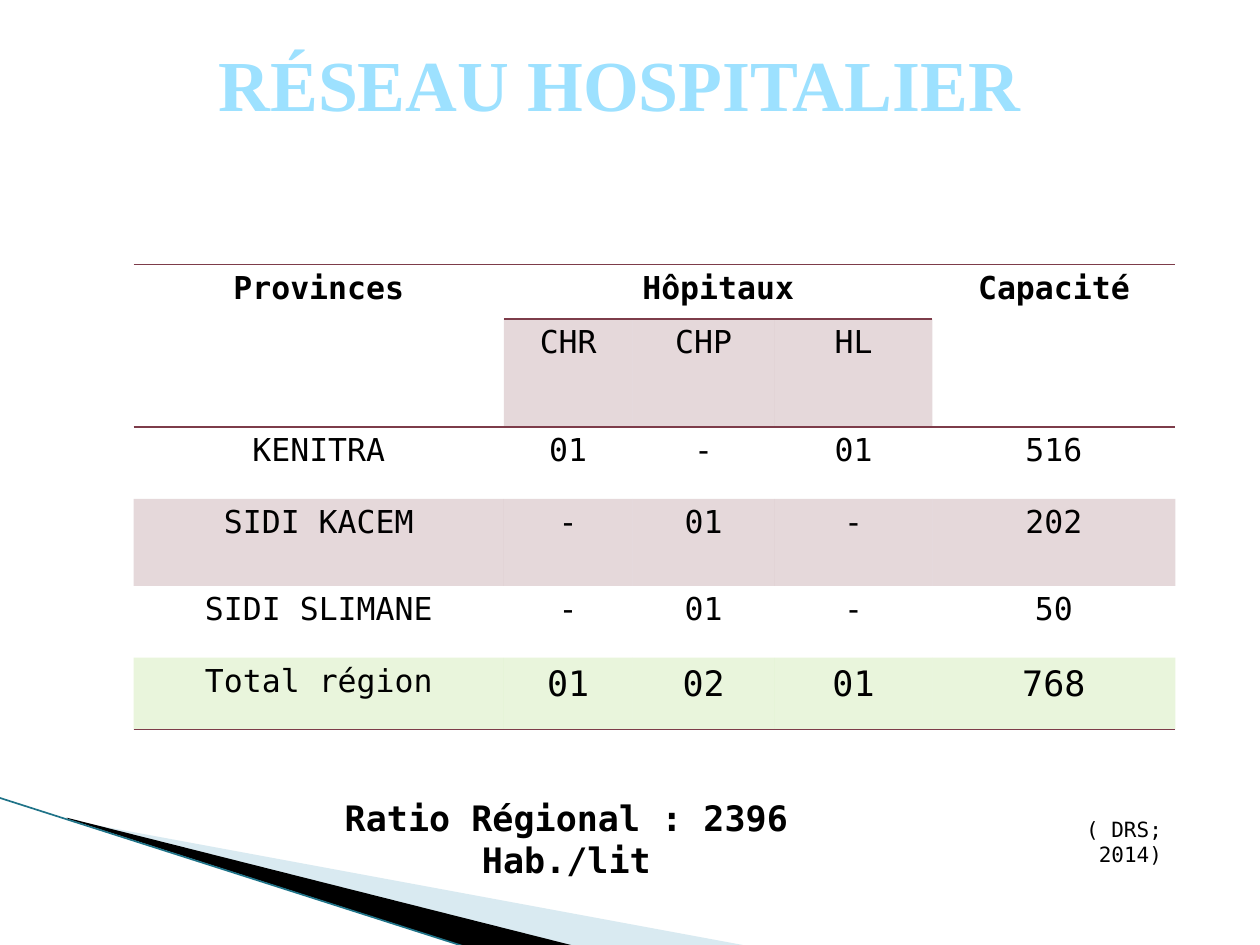
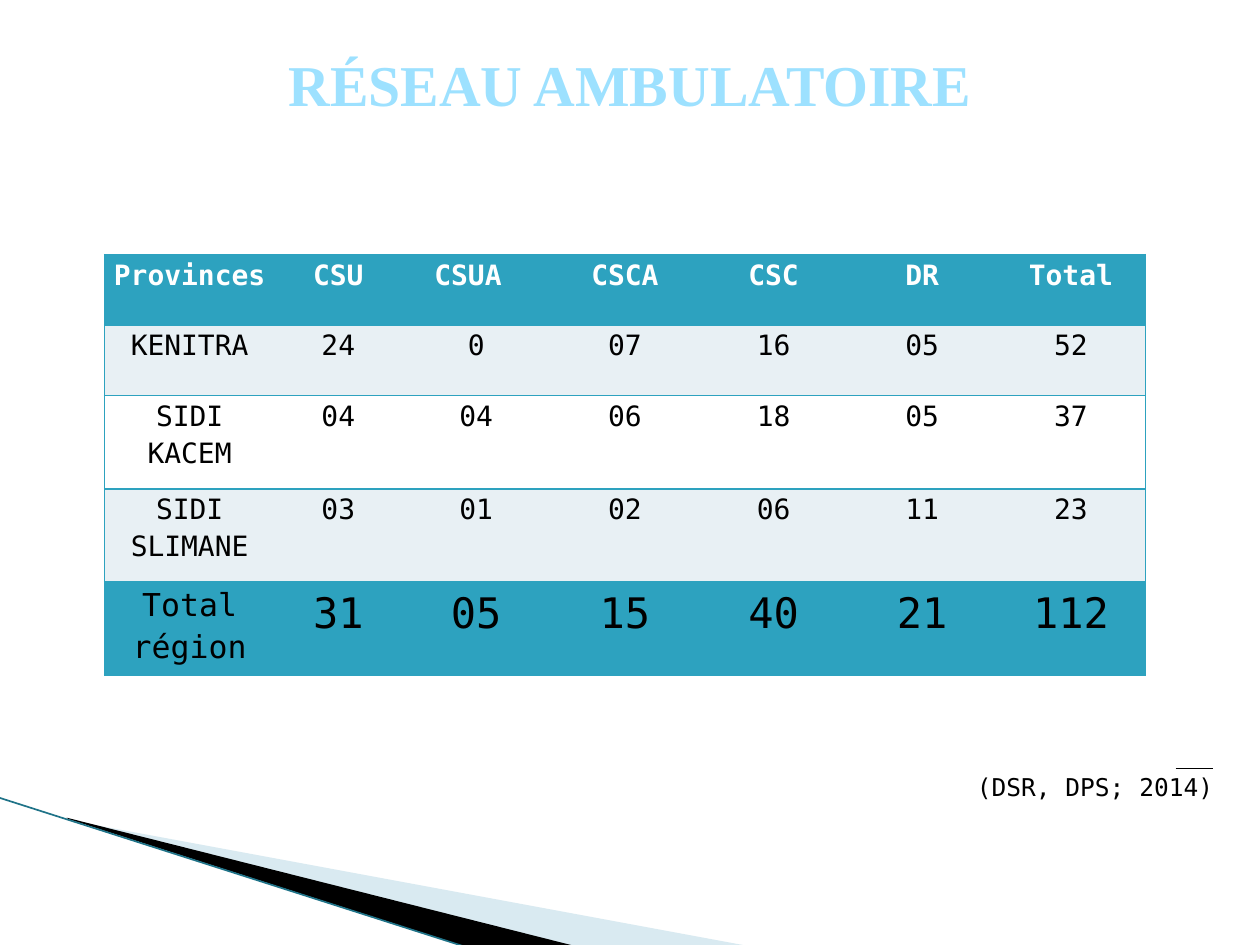
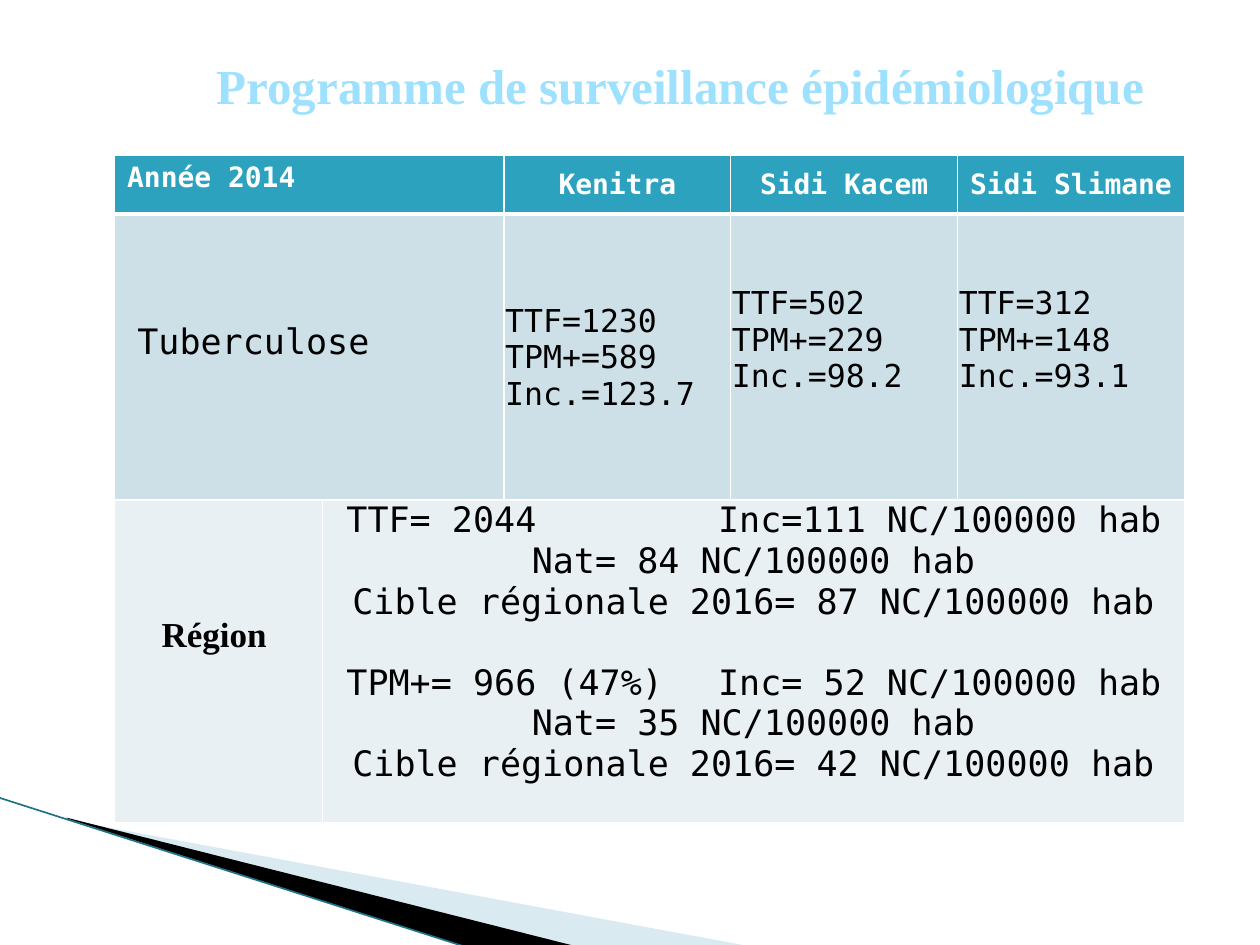
from dataclasses import dataclass, field, replace
from typing import Any, NamedTuple

from lxml import etree
from pptx import Presentation
from pptx import util as u
from pptx.dml.color import RGBColor
from pptx.enum import shapes, text
from pptx.oxml.ns import qn

# Slide size and the grid that all lengths are counted in
WIDTH, HEIGHT = u.Inches(10), u.Inches(7.5)
COL, ROW = WIDTH // 100, HEIGHT // 75

COLOURS = {
    "ink": "000000", "paper": "FFFFFF", "title": "9DE1FF",
    "teal": "2DA2BF", "pale": "E8F0F4", "mist": "CDE0E8",
    "wine": "7D3C4A", "green": "92D050",
    "sweep": "A0CBDC", "rim": "1F7388",
}
MONO, SERIF = "DejaVu Sans Mono", "Times New Roman"
NO_GRID_STYLE = "{2D5ABB26-0587-4C30-8999-92F81FD0307C}"
CENTER, LEFT, RIGHT = text.PP_ALIGN.CENTER, text.PP_ALIGN.LEFT, text.PP_ALIGN.RIGHT
MIDDLE = text.MSO_ANCHOR.MIDDLE


class Box(NamedTuple):
    """Left, top, width and height in grid columns and rows."""
    left: float
    top: float
    width: float
    height: float

    def emu(self) -> tuple[int, ...]:
        return tuple(round(n * step) for n, step in zip(self, (COL, ROW, COL, ROW)))


def margins(left: float, top: float, right: float, bottom: float) -> dict[str, Any]:
    sides = ("left", "top", "right", "bottom")
    return {f"margin_{side}": u.Inches(n)
            for side, n in zip(sides, (left, top, right, bottom))}


@dataclass(frozen=True)
class Look:
    """Format of a text box or table cell."""
    size: float = 18
    bold: bool = False
    face: str = MONO
    ink: str = "ink"
    align: Any = CENTER
    spacing: float = 1.0
    holder: dict[str, Any] = field(default_factory=dict)
    fill: str | None = None
    alpha: int = 100
    edge: str = "teal"
    edges: dict[str, float] = field(default_factory=dict)
    tabs: tuple[float, ...] = ()
    gaps: dict[int, float] = field(default_factory=dict)


class Entry(NamedTuple):
    words: str
    look: Look


@dataclass(frozen=True)
class Grid:
    """Table with column widths and row heights in grid units."""
    left: float
    top: float
    columns: list[float]
    rows: list[float]
    entries: list[list[Entry]]
    merges: tuple[tuple[int, int, int, int], ...] = ()


def rgb(key: str) -> RGBColor:
    return RGBColor.from_string(COLOURS[key])


def assign(target: Any, values: dict[str, Any]) -> None:
    for name, value in values.items():
        setattr(target, name, value)


def paint(target: Any, properties: Any, key: str, alpha: int = 100) -> None:
    target.fill.solid()
    target.fill.fore_color.rgb = rgb(key)
    if alpha < 100:
        colour = properties.find(qn("a:solidFill"))[0]
        etree.SubElement(colour, qn("a:alpha"), val=str(alpha * 1000))


def write(frame: Any, words: str, look: Look) -> None:
    for index, line in enumerate(words.split("\n")):
        paragraph = frame.paragraphs[0] if index == 0 else frame.add_paragraph()
        tabbed = "\t" in line
        if tabbed:
            stops = etree.SubElement(paragraph._p.get_or_add_pPr(), qn("a:tabLst"))
            for stop in look.tabs:
                etree.SubElement(stops, qn("a:tab"), pos=str(u.Inches(stop)), algn="l")
        assign(paragraph, {
            "alignment": LEFT if tabbed else look.align,
            "line_spacing": look.spacing,
            "space_before": u.Pt(look.gaps.get(index, 0)),
        })
        run = paragraph.add_run()
        run.text = line
        assign(run.font, {"size": u.Pt(look.size), "bold": look.bold, "name": look.face})
        run.font.color.rgb = rgb(look.ink)


def add_title(slide: Any, words: str, box: Box, size: float) -> None:
    title = slide.shapes.title
    assign(title, dict(zip(("left", "top", "width", "height"), box.emu())))
    assign(title.text_frame, {"word_wrap": True, "vertical_anchor": MIDDLE,
                              "auto_size": text.MSO_AUTO_SIZE.NONE})
    write(title.text_frame, words, Look(size, True, SERIF, "title"))


def add_note(slide: Any, words: str, box: Box, look: Look) -> Any:
    note = slide.shapes.add_textbox(*box.emu())
    note.text_frame.word_wrap = True
    write(note.text_frame, words, look)
    return note


def draw_edges(properties: Any, look: Look) -> None:
    for side in "LRTB":
        if side in look.edges:
            line = etree.SubElement(properties, qn(f"a:ln{side}"),
                                    w=str(u.Pt(look.edges[side])))
            solid = etree.SubElement(line, qn("a:solidFill"))
            etree.SubElement(solid, qn("a:srgbClr"), val=COLOURS[look.edge])


def add_grid(slide: Any, grid: Grid) -> None:
    box = Box(grid.left, grid.top, sum(grid.columns), sum(grid.rows))
    holder = slide.shapes.add_table(len(grid.rows), len(grid.columns), *box.emu())
    table = holder.table
    assign(table, {"first_row": False, "horz_banding": False})
    table._tbl.tblPr.find(qn("a:tableStyleId")).text = NO_GRID_STYLE
    for column, width in zip(table.columns, grid.columns):
        column.width = round(width * COL)
    for row, height in zip(table.rows, grid.rows):
        row.height = round(height * ROW)
    for r, entries in enumerate(grid.entries):
        for c, (words, look) in enumerate(entries):
            cell = table.cell(r, c)
            assign(cell, look.holder)
            properties = cell._tc.get_or_add_tcPr()
            draw_edges(properties, look)
            if look.fill:
                paint(cell, properties, look.fill, look.alpha)
            if words:
                write(cell.text_frame, words, look)
    for top, left, bottom, right in grid.merges:
        table.cell(top, left).merge(table.cell(bottom, right))


def add_line(slide: Any, start: tuple[float, float], end: tuple[float, float],
             key: str, weight: float) -> Any:
    ends = [round(n * step) for n, step in zip((*start, *end), (COL, ROW) * 2)]
    line = slide.shapes.add_connector(shapes.MSO_CONNECTOR.STRAIGHT, *ends)
    line.line.color.rgb = rgb(key)
    line.line.width = u.Pt(weight)
    etree.SubElement(line._element.spPr, qn("a:effectLst"))
    return line


def add_wedge(slide: Any, points: list[tuple[float, float]], key: str, alpha: int) -> Any:
    corners = [(round(x * COL), round(y * ROW)) for x, y in points]
    builder = slide.shapes.build_freeform(*corners[0], scale=1.0)
    builder.add_line_segments(corners[1:], close=True)
    wedge = builder.convert_to_shape()
    wedge.shadow.inherit = False
    wedge.line.fill.background()
    paint(wedge, wedge._element.spPr, key, alpha)
    return wedge


def decorate_layout(layout: Any, slide: Any) -> None:
    """Corner sweep, moved to the layout so that every slide shows it."""
    sweep = [
        add_wedge(slide, [(5.5, 65.1), (59.5, 75.1), (45.6, 75.1), (5.5, 65)], "sweep", 40),
        add_wedge(slide, [(5.3, 64.9), (45.7, 75.1), (37.2, 75.2), (5.4, 65)], "ink", 100),
        add_line(slide, (-0.1, 63.3), (37.1, 75.2), "rim", 0.95),
    ]
    for part in sweep:
        layout.shapes._spTree.append(part._element)


# Cell formats shared by the tables
TIGHT = margins(0.07, 0, 0.07, 0)
PLAIN = Look(spacing=1.15, holder=TIGHT)


def hospital_grid() -> Grid:
    body = replace(PLAIN, edge="wine")
    head = replace(body, bold=True, edges={"T": 1, "B": 1})
    rose = replace(body, fill="wine", alpha=20)
    total = replace(body, fill="green", alpha=20, edges={"B": 1})
    sub = replace(rose, edges={"T": 1})
    provinces = [(["KENITRA", "01", "-", "01", "516"], body),
                 (["SIDI KACEM", "-", "01", "-", "202"], rose),
                 (["SIDI SLIMANE", "-", "01", "-", "50"], body)]
    entries = [
        [Entry(w, head) for w in ("Provinces", "Hôpitaux", "", "", "Capacité")],
        [Entry("", replace(head, edges={"B": 1})),
         *(Entry(w, sub) for w in ("CHR", "CHP", "HL")),
         Entry("", replace(head, edges={"B": 1}))],
        *([Entry(w, look) for w in words] for words, look in provinces),
        [Entry("Total région", total),
         *(Entry(w, replace(total, size=20)) for w in ("01", "02", "01", "768"))],
    ]
    return Grid(10.6, 21, [29.4, 10.2, 11.3, 12.5, 19.3],
                [4.3, 8.6, 5.7, 6.9, 5.7, 5.7], entries,
                ((0, 0, 1, 0), (0, 1, 0, 3), (0, 4, 1, 4)))


def ambulatory_grid() -> Grid:
    body = replace(PLAIN, size=16)
    rows = [
        (["Provinces", "CSU", "CSUA", "CSCA", "CSC", "DR", "Total"],
         replace(body, bold=True, ink="paper", fill="teal")),
        (["KENITRA", "24", "0", "07", "16", "05", "52"], replace(body, fill="pale")),
        (["SIDI KACEM", "04", "04", "06", "18", "05", "37"], replace(body, fill="paper")),
        (["SIDI SLIMANE", "03", "01", "02", "06", "11", "23"], replace(body, fill="pale")),
        (["Total région", "31", "05", "15", "40", "21", "112"],
         replace(body, size=24, fill="teal")),
    ]
    entries = []
    for r, (words, look) in enumerate(rows):
        line = []
        for c, word in enumerate(words):
            outer = {0: {"L": 1}, len(words) - 1: {"R": 1}}.get(c, {})
            cell = replace(look, edges={"T": 1, "B": 1, **outer})
            if c == 0:
                cell = replace(cell, size=min(look.size, 18),
                               holder=margins(0.05, 0, 0.05, 0))
            if word == "CSUA":
                cell = replace(cell, holder=margins(0.07, 0, 0.2, 0))
            line.append(Entry(word, cell))
        entries.append(line)
    return Grid(8.3, 20.2, [13.5, 10.1] + [11.8] * 5, [5.6] * 2 + [7.4] * 3, entries)


def surveillance_grid() -> Grid:
    around = {"L": 1, "R": 1, "T": 1, "B": 1}
    base = Look(edge="paper", edges=around)
    head = replace(base, size=16, bold=True, ink="paper", fill="teal",
                   edges={**around, "B": 3},
                   holder={**margins(0.08, 0.05, 0.08, 0.05), "vertical_anchor": MIDDLE})
    year = replace(head, align=LEFT, holder=margins(0.1, 0.05, 0.1, 0.05))
    case = replace(base, align=LEFT, fill="mist", edges={**around, "T": 3})
    disease = replace(case, size=20, holder={**margins(0.18, 0.01, 0.01, 0.24),
                                             "vertical_anchor": MIDDLE})

    def figures(ttf: str, tpm: str, incidence: str, lift: float) -> Entry:
        holder = {**margins(0.01, 0.01, 0.01, lift), "vertical_anchor": MIDDLE}
        return Entry(f"TTF={ttf}\nTPM+={tpm}\nInc.={incidence}",
                     replace(case, holder=holder))

    region = replace(base, size=20, bold=True, face=SERIF, fill="pale",
                     holder=margins(0.07, 0.92, 0.14, 0))
    summary = replace(base, size=20, fill="pale", holder=TIGHT,
                      tabs=(0.12, 3.07), gaps={3: 23})
    results = "\n".join([
        "\tTTF= 2044\tInc=111 NC/100000 hab",
        "Nat= 84 NC/100000 hab",
        "Cible régionale 2016= 87 NC/100000 hab",
        "\tTPM+= 966 (47%)\tInc= 52 NC/100000 hab",
        "Nat= 35 NC/100000 hab",
        "Cible régionale 2016= 42 NC/100000 hab",
    ])
    entries = [
        [Entry("Année 2014", year), Entry("", year),
         *(Entry(w, head) for w in ("Kenitra", "Sidi Kacem", "Sidi Slimane"))],
        [Entry("Tuberculose", disease), Entry("", disease),
         figures("1230", "589", "123.7", 0), figures("502", "229", "98.2", 0.28),
         figures("312", "148", "93.1", 0.28)],
        [Entry("Région", region), Entry(results, summary), *[Entry("", summary)] * 3],
    ]
    return Grid(9.1, 12.3, [16.5, 14.4, 18, 18, 18], [4.7, 22.7, 25.6], entries,
                ((0, 0, 0, 1), (1, 0, 1, 1), (2, 1, 2, 4)))


def cast_shadow(note: Any) -> None:
    colour = note.text_frame.paragraphs[0].runs[0]._r.rPr.find(qn("a:solidFill"))
    effects = etree.Element(qn("a:effectLst"))
    shadow = etree.SubElement(effects, qn("a:outerShdw"), blurRad="38100",
                              dist="38100", dir="2700000", algn="tl")
    black = etree.SubElement(shadow, qn("a:srgbClr"), val=COLOURS["ink"])
    etree.SubElement(black, qn("a:alpha"), val="43000")
    colour.addnext(effects)


def main() -> None:
    deck = Presentation()
    assign(deck, {"slide_width": WIDTH, "slide_height": HEIGHT})
    layout = deck.slide_layouts[5]
    hospitals, clinics, surveillance = (deck.slides.add_slide(layout) for _ in range(3))
    decorate_layout(layout, hospitals)

    # Hospital network
    add_title(hospitals, "RÉSEAU HOSPITALIER", Box(0, 2.5, 98.4, 8.2), 41)
    add_grid(hospitals, hospital_grid())
    add_note(hospitals, "( DRS; 2014)", Box(81, 64.3, 12.2, 5), Look(12, align=RIGHT))
    ratio = add_note(hospitals, "Ratio Régional : 2396 Hab./lit",
                     Box(21.7, 62.7, 46.5, 7.7), Look(20, True))
    cast_shadow(ratio)

    # Ambulatory network
    add_title(clinics, "RÉSEAU AMBULATOIRE", Box(0, 2.9, 100, 7.4), 33)
    add_grid(clinics, ambulatory_grid())
    add_line(clinics, (93.3, 61), (96.3, 61), "ink", 1)
    add_note(clinics, "(DSR, DPS; 2014)", Box(13, 60.8, 84.3, 3.4), Look(14, align=RIGHT))

    # Epidemiological surveillance
    add_title(surveillance, "Programme de surveillance épidémiologique",
              Box(11.4, 3.9, 85.2, 5.7), 28)
    add_grid(surveillance, surveillance_grid())

    deck.save("out.pptx")


if __name__ == "__main__":
    main()
